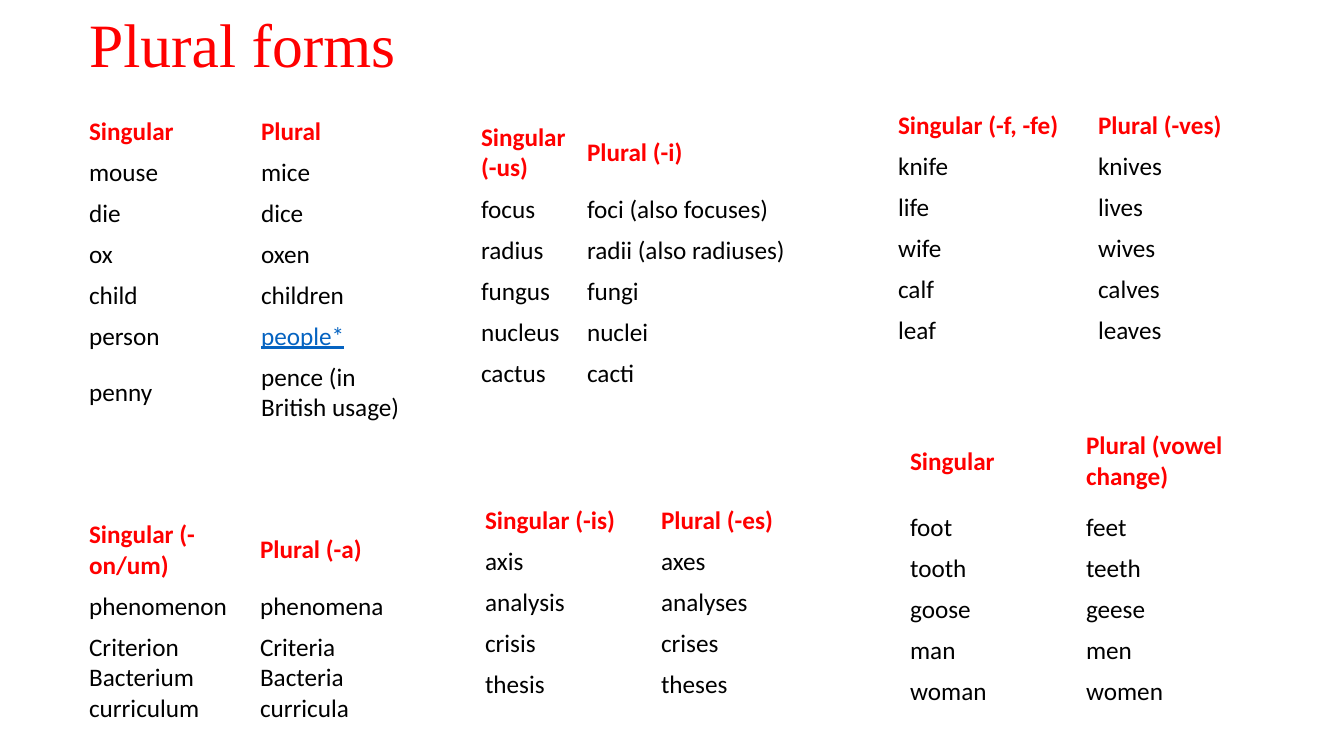
from dataclasses import dataclass

from pptx import Presentation
from pptx.dml.color import RGBColor
from pptx.enum.text import MSO_ANCHOR, PP_ALIGN
from pptx.util import Pt

MIDDLE = MSO_ANCHOR.MIDDLE
LEFT = PP_ALIGN.LEFT
EMU_PER_PX = 914400 / 100.8


def px(length):
    return round(length * EMU_PER_PX)


@dataclass(frozen=True)
class Theme:
    heading: RGBColor = RGBColor(0xFF, 0x00, 0x00)
    body: RGBColor = RGBColor(0x00, 0x00, 0x00)
    reference: RGBColor = RGBColor(0x05, 0x63, 0xC1)
    title_font: str = "Times New Roman"
    body_font: str = "Calibri"
    title_size: int = 44
    body_size: int = 18
    row_height: int = 41


class SlideBuilder:
    def __init__(self, presentation, theme):
        self.theme = theme
        self.slide = presentation.slides.add_slide(presentation.slide_layouts[5])

    def style(self, frame, font_name, size, color, bold=False, underline=False):
        for paragraph in frame.paragraphs:
            paragraph.alignment = LEFT
            for run in paragraph.runs:
                run.font.name = font_name
                run.font.size = Pt(size)
                run.font.color.rgb = color
                run.font.bold = bold
                run.font.underline = underline

    def title(self, wording, left, top, width, height):
        heading = self.slide.shapes.title
        heading.left, heading.top = px(left), px(top)
        heading.width, heading.height = px(width), px(height)
        heading.text_frame.text = wording
        heading.text_frame.vertical_anchor = MIDDLE
        heading.text_frame.paragraphs[0].line_spacing = 0.9
        self.style(heading.text_frame, self.theme.title_font,
                   self.theme.title_size, self.theme.heading)

    def word_cell(self, cell, wording, is_heading):
        theme = self.theme
        is_reference = wording.endswith("*")
        color = (theme.heading if is_heading
                 else theme.reference if is_reference else theme.body)
        cell.fill.background()
        cell.vertical_anchor = MIDDLE
        cell.text_frame.text = wording
        self.style(cell.text_frame, theme.body_font, theme.body_size, color,
                   is_heading, is_reference)

    def word_table(self, left, top, widths, words, tall_rows):
        heights = [tall_rows.get(index, self.theme.row_height)
                   for index in range(len(words))]
        table = self.slide.shapes.add_table(
            len(words), len(widths), px(left), px(top),
            px(sum(widths)), px(sum(heights))).table
        table.horz_banding = False
        for column, width in zip(table.columns, widths):
            column.width = px(width)
        for index, (row, height, pair) in enumerate(zip(table.rows, heights, words)):
            row.height = px(height)
            for cell, wording in zip(row.cells, pair):
                self.word_cell(cell, wording, index == 0)


WORD_TABLES = [
    (888, 105, (200, 200), [
        ("Singular (-f, -fe)", "Plural (-ves)"),
        ("knife", "knives"),
        ("life", "lives"),
        ("wife", "wives"),
        ("calf", "calves"),
        ("leaf", "leaves"),
    ], {}),
    (900, 416, (176, 176), [
        ("Singular", "Plural (vowel change)"),
        ("foot", "feet"),
        ("tooth", "teeth"),
        ("goose", "geese"),
        ("man", "men"),
        ("woman", "women"),
    ], {0: 91}),
    (79, 111, (172, 172), [
        ("Singular", "Plural"),
        ("mouse", "mice"),
        ("die", "dice"),
        ("ox", "oxen"),
        ("child", "children"),
        ("person", "people*"),
        ("penny", "pence (in British usage)"),
    ], {6: 72}),
    (471, 117, (106, 304), [
        ("Singular (-us)", "Plural (-i)"),
        ("focus", "foci (also focuses)"),
        ("radius", "radii (also radiuses)"),
        ("fungus", "fungi"),
        ("nucleus", "nuclei"),
        ("cactus", "cacti"),
        ("", ""),
        ("", ""),
    ], {0: 72}),
    (475, 500, (176, 176), [
        ("Singular (-is)", "Plural (-es)"),
        ("axis", "axes"),
        ("analysis", "analyses"),
        ("crisis", "crises"),
        ("thesis", "theses"),
    ], {}),
    (79, 514, (171, 171), [
        ("Singular (-on/um)", "Plural (-a)"),
        ("phenomenon", "phenomena"),
        ("Criterion\nBacterium\ncurriculum", "Criteria\nBacteria\ncurricula"),
    ], {0: 72, 2: 102}),
]


def main():
    presentation = Presentation()
    presentation.slide_width, presentation.slide_height = px(1344), px(756)
    builder = SlideBuilder(presentation, Theme())
    builder.title("Plural forms", 79, 8, 1159, 79)
    for word_table in WORD_TABLES:
        builder.word_table(*word_table)
    presentation.save("out.pptx")


if __name__ == "__main__":
    main()
